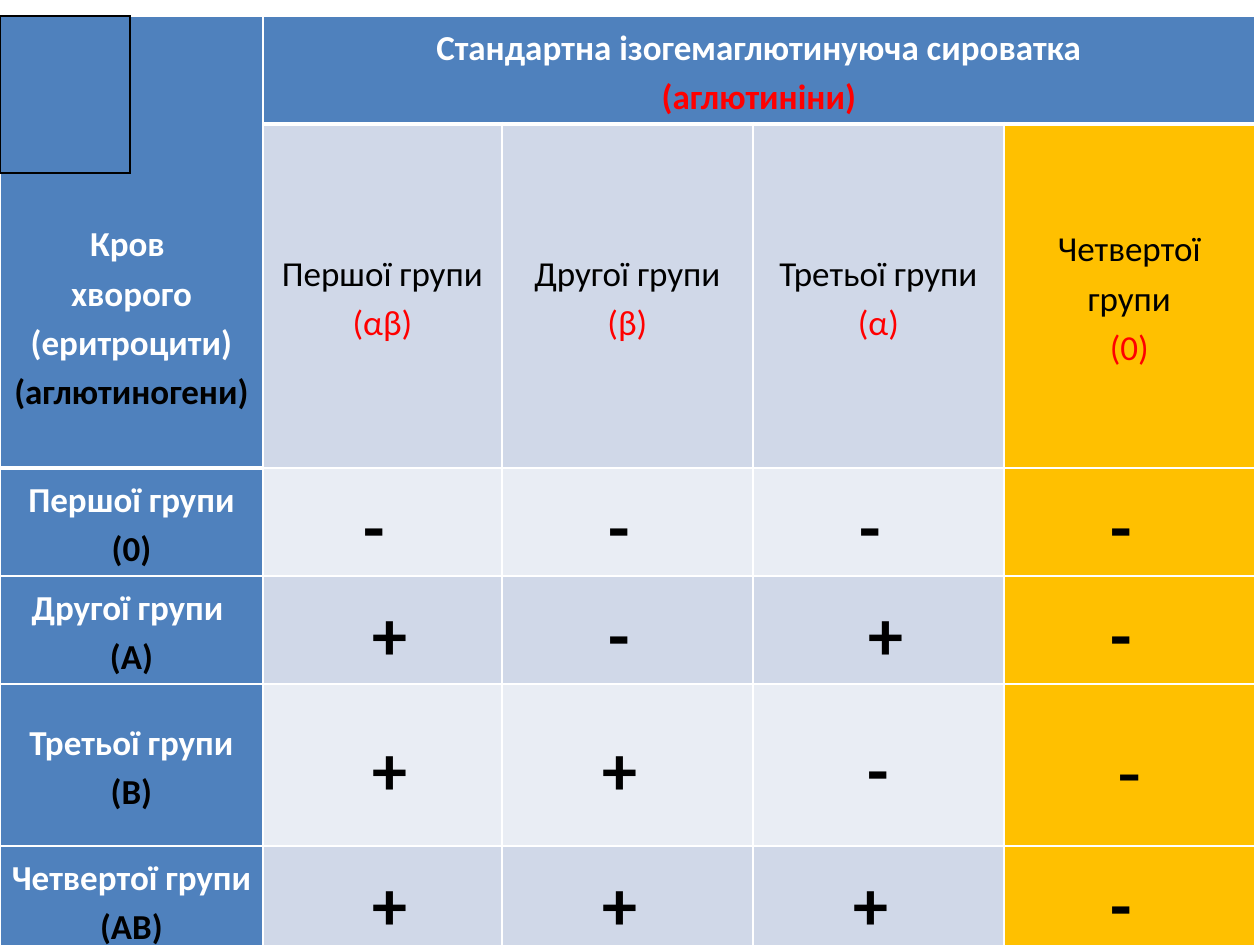
"""Build a slide with the blood group compatibility table."""
from dataclasses import dataclass

from lxml import etree
from pptx import Presentation
from pptx import util as u
from pptx.dml.color import RGBColor
from pptx.enum import text
from pptx.oxml.ns import qn

SCALE = 914400 / 126


def px(length):
    return u.Emu(round(length * SCALE))


@dataclass(frozen=True)
class Theme:
    header: str = "4F81BD"
    bands: tuple = ("D0D8E8", "E9EDF4")
    accent: str = "FFC000"
    white: str = "FFFFFF"
    black: str = "000000"
    red: str = "FF0000"
    font: str = "Calibri"
    serif: str = "Times New Roman"
    body: int = 20
    sign: int = 40
    spacing: float = 1.15


class SlideBuilder:
    def __init__(self, slide, theme):
        self.slide = slide
        self.theme = theme

    def table(self, left, top, columns, rows):
        frame = self.slide.shapes.add_table(
            len(rows), len(columns), px(left), px(top), px(sum(columns)), px(sum(rows)))
        table = frame.table
        table.first_row = table.horz_banding = False
        for column, width in zip(table.columns, columns):
            column.width = px(width)
        for row, height in zip(table.rows, rows):
            row.height = px(height)
        return table

    def borders(self, cell, color, bottom=1):
        properties = cell._tc.get_or_add_tcPr()
        for side, width in zip("LRTB", (1, 1, 1, bottom)):
            line = etree.SubElement(properties, qn(f"a:ln{side}"), w=str(u.Pt(width)))
            fill = etree.SubElement(line, qn("a:solidFill"))
            etree.SubElement(fill, qn("a:srgbClr"), val=color)

    def fill(self, cell, color):
        cell.fill.solid()
        cell.fill.fore_color.rgb = RGBColor.from_string(color)

    def label(self, cell, paragraphs, size, bold, font=None, top=0):
        """Put paragraphs, each a list of (words, color) runs, into a cell."""
        cell.vertical_anchor = text.MSO_ANCHOR.MIDDLE
        cell.margin_left = cell.margin_right = px(9)
        cell.margin_top, cell.margin_bottom = px(top), 0
        frame = cell.text_frame
        frame.text = "\n".join(runs[0][0] for runs in paragraphs)
        for paragraph, runs in zip(frame.paragraphs, paragraphs):
            paragraph.alignment = text.PP_ALIGN.CENTER
            paragraph.line_spacing = self.theme.spacing
            for words, _ in runs[1:]:
                paragraph.add_run().text = words
            for run, (_, color) in zip(paragraph.runs, runs):
                run.font.name = font or self.theme.font
                run.font.size = u.Pt(size)
                run.font.bold = bold
                run.font.color.rgb = RGBColor.from_string(color)


def add_compatibility_table(builder):
    theme = builder.theme
    white, black, red = theme.white, theme.black, theme.red
    table = builder.table(0, 16, [263, 239, 251, 251, 251], [108, 270, 108, 108, 162, 108])
    for row in range(6):
        for column in range(5):
            cell = table.cell(row, column)
            thick = row == 0 or (row == 1 and column == 0)
            builder.borders(cell, white, 3 if thick else 1)
            if row == 0 or column == 0:
                color = theme.header
            else:
                color = theme.accent if column == 4 else theme.bands[(row - 1) % 2]
            builder.fill(cell, color)
    table.cell(0, 0).merge(table.cell(1, 0))
    table.cell(0, 1).merge(table.cell(0, 4))

    blood = [[(words, white)] for words in ("Кров ", "хворого", "(еритроцити)")]
    builder.label(table.cell(0, 0), blood + [[("(аглютиногени)", black)]],
                  theme.body, True, top=147)
    builder.label(table.cell(0, 1), [[("Стандартна ізогемаглютинуюча сироватка", white)],
                                     [("(аглютиніни)", red)]], theme.body, True)

    sera = [("Першої групи", "(αβ)"), ("Другої групи", "(β)"),
            ("Третьої групи", "(α)"), ("Четвертої групи", "(0)")]
    for column, (group, agglutinin) in enumerate(sera, 1):
        builder.label(table.cell(1, column), [[(group, black)], [(agglutinin, red)]],
                      theme.body, False)

    groups = [
        ([[("Першої групи ", white), ("(0)", black)]], ["- ", "- ", "- ", "- "]),
        ([[("Другої групи ", white)], [("(А)", black)]], [" +", "- ", " +", "- "]),
        ([[("Третьої групи", white)], [("(В)", black)]], [" +", "+ ", "-", "-"]),
        ([[("Четвертої групи ", white), ("(АВ)", black)]], [" +", "+ ", "+ ", "- "]),
    ]
    for row, (heading, signs) in enumerate(groups, 2):
        builder.label(table.cell(row, 0), heading, theme.body, True)
        for column, sign in enumerate(signs, 1):
            font = theme.serif if (row, column) == (4, 4) else theme.font
            builder.label(table.cell(row, column), [[(sign, black)]], theme.sign, True, font)


def add_corner_box(builder):
    cell = builder.table(0, 16, [130], [157]).cell(0, 0)
    builder.borders(cell, builder.theme.black)
    cell.fill.background()


def main():
    presentation = Presentation()
    presentation.slide_width, presentation.slide_height = px(1260), px(945)
    slide = presentation.slides.add_slide(presentation.slide_layouts[6])
    builder = SlideBuilder(slide, Theme())
    add_compatibility_table(builder)
    add_corner_box(builder)
    presentation.save("out.pptx")


if __name__ == "__main__":
    main()
